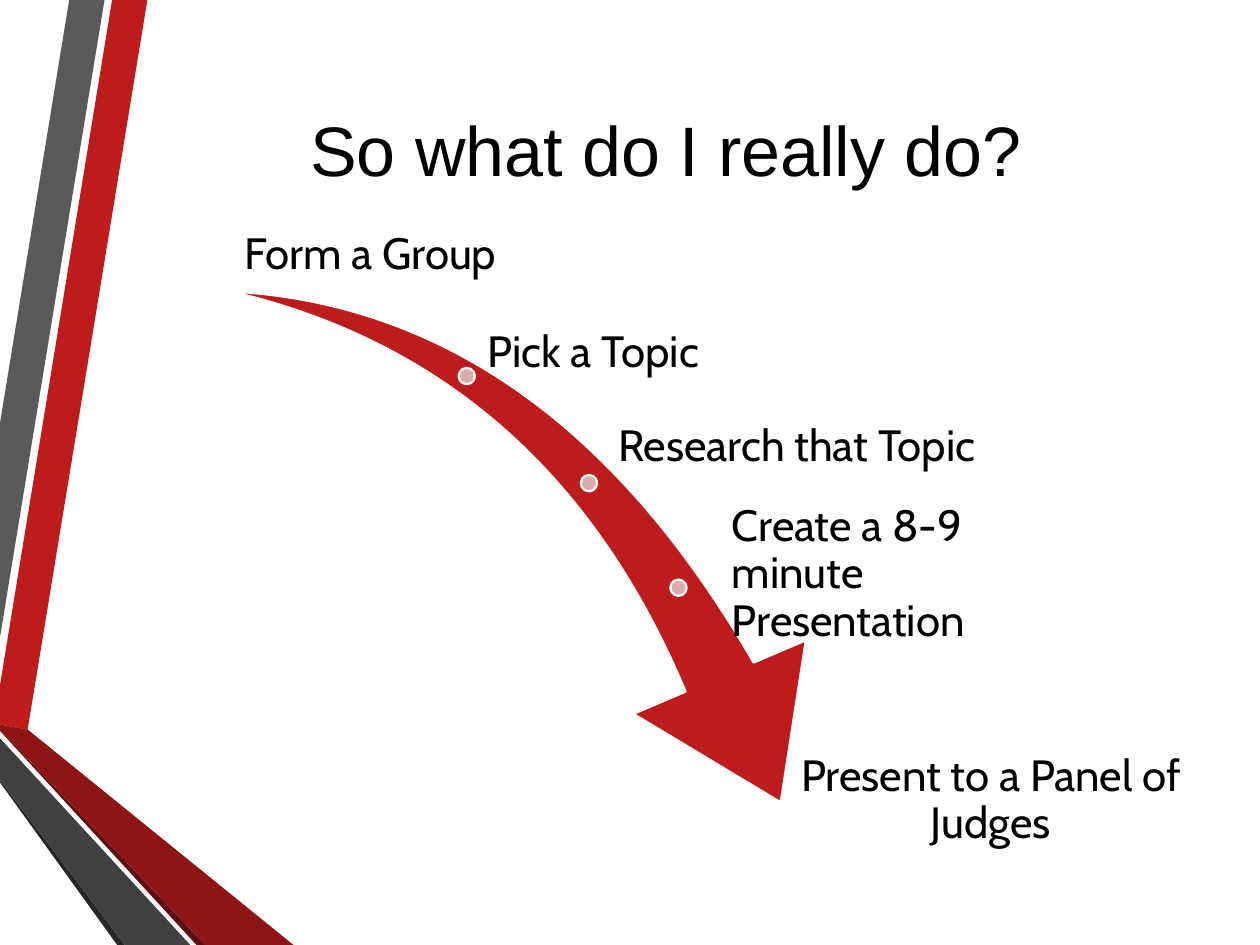
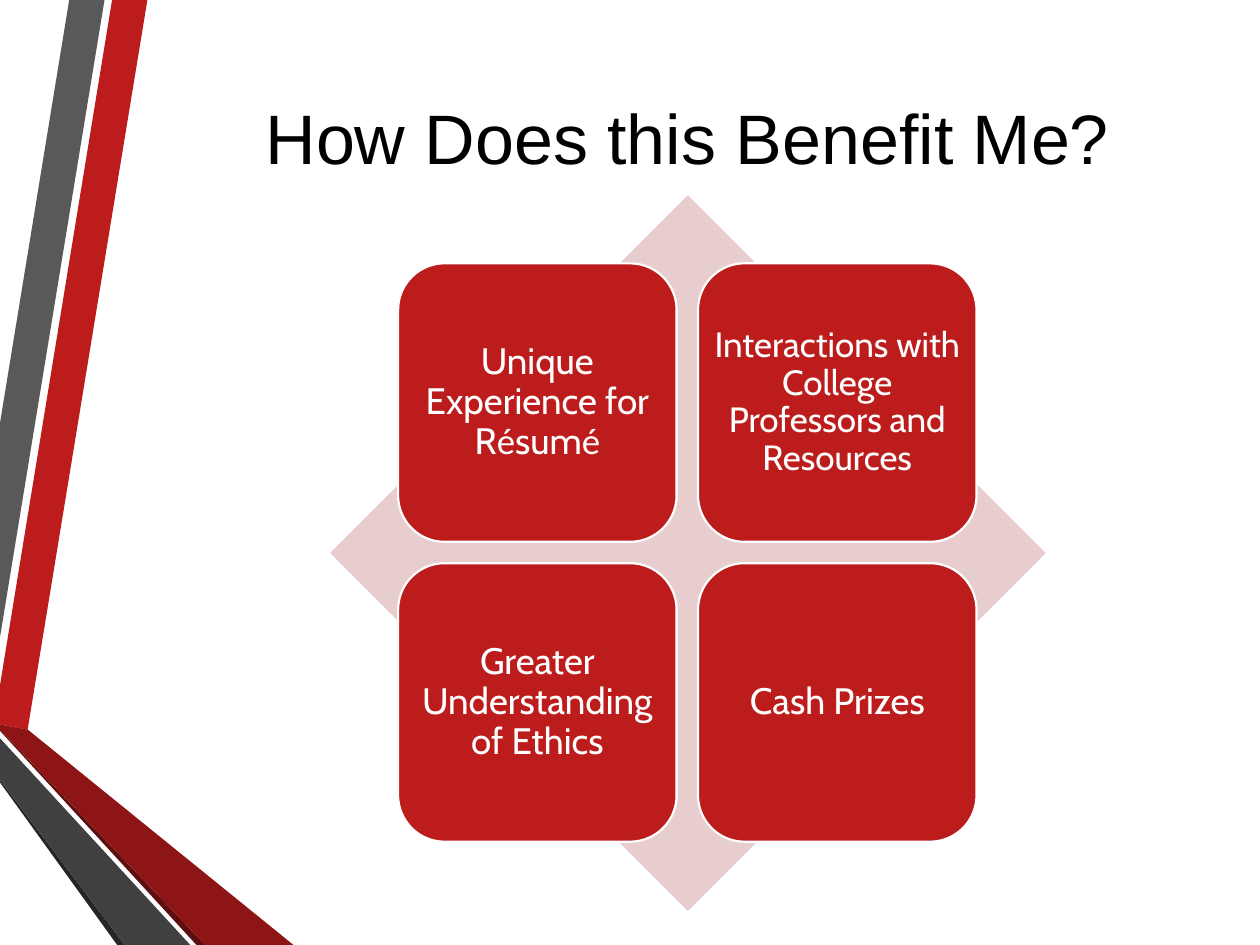
"""Build two slides: the steps of the contest and its benefits."""
from itertools import product

from pptx import Presentation
from pptx.dml.color import RGBColor
from pptx.enum import shapes, text
from pptx.util import Inches, Pt

COLOURS = {
    "red": "BC1C1C", "grey": "595959", "shade": "262626", "wine": "5E0E0E",
    "dark red": "8D1515", "dark grey": "404040", "dot": "DAACAC",
    "pink": "E7CDCD", "white": "FFFFFF", "black": "000000",
}
BANDS = [
    ("red", [(0, 5.44), (0, 5.75), (0.22, 5.79), (1.17, 0), (0.89, 0)]),
    ("grey", [(0.83, 0), (0.55, 0), (0, 3.36), (0, 5.06)]),
    ("shade", [(0, 6.19), (0, 6.21), (0.93, 7.5), (0.99, 7.5)]),
    ("wine", [(0, 5.79), (0, 5.8), (1.56, 7.5), (1.63, 7.5)]),
    ("dark red", [(0, 5.79), (1.63, 7.5), (2.33, 7.5), (0.22, 5.79), (0, 5.75)]),
    ("dark grey", [(0, 6.19), (0.99, 7.5), (1.51, 7.5), (0, 5.86)]),
]
LEFT, CENTER, RIGHT = text.PP_ALIGN.LEFT, text.PP_ALIGN.CENTER, text.PP_ALIGN.RIGHT
TOP, MIDDLE, BOTTOM = text.MSO_ANCHOR.TOP, text.MSO_ANCHOR.MIDDLE, text.MSO_ANCHOR.BOTTOM
PRESET = shapes.MSO_SHAPE
STEPS = [
    ("Form a Group", (1.73, 1.29, 2.42, 0.95), CENTER, BOTTOM),
    ("Pick a Topic", (3.84, 2.33, 3.53, 0.95), LEFT, MIDDLE),
    ("Research that Topic", (3.94, 3.05, 3.83, 1), RIGHT, MIDDLE),
    ("Create a 8-9 minute Presentation", (5.78, 4, 2.83, 1.12), LEFT, MIDDLE),
    ("Present to a Panel of Judges", (6.23, 5.95, 3.27, 0.95), CENTER, TOP),
]
DOTS = [(3.64, 2.92), (4.61, 3.77), (5.32, 4.6)]
DOT_SIZE = 0.13
BENEFITS = [
    ([("Unique Experience for R", "Cabin"), ("é", "Calibri"),
      ("sum", "Cabin"), ("é", "Calibri")], 21),
    ([("Interactions with College Professors and Resources", "Cabin")], 20),
    ([("Greater Understanding of Ethics", "Cabin")], 21),
    ([("Cash Prizes", "Cabin")], 21),
]
TILE_LEFT, TILE_TOP, TILE_SIZE, TILE_STEP = 3.16, 2.09, 2.21, 2.38


def colour(name):
    """Return the named colour."""
    return RGBColor.from_string(COLOURS[name])


def paint(shape, fill, outlined=False):
    """Fill a shape and give it a white outline or none."""
    shape.shadow.inherit = False
    shape.fill.solid()
    shape.fill.fore_color.rgb = colour(fill)
    if outlined:
        shape.line.color.rgb = colour("white")
        shape.line.width = Pt(1.25)
    else:
        shape.line.fill.background()
    return shape


def add_preset(page, kind, place, fill, outlined=True):
    """Add a painted preset shape."""
    shape = page.shapes.add_shape(kind, *map(Inches, place))
    return paint(shape, fill, outlined)


def add_band(page, fill, corners):
    """Add one closed polygon of the side decoration."""
    points = [(Inches(x), Inches(y)) for x, y in corners]
    builder = page.shapes.build_freeform(*points[0])
    builder.add_line_segments(points[1:], close=True)
    paint(builder.convert_to_shape(), fill)


def add_label(page, spans, place, size, ink="black", align=CENTER,
              anchor=MIDDLE, inset=0.03, spacing=0.9):
    """Add a wrapped text box built from (wording, font) spans."""
    box = page.shapes.add_textbox(*map(Inches, place))
    frame = box.text_frame
    frame.word_wrap = True
    frame.vertical_anchor = anchor
    frame.margin_left = frame.margin_right = Inches(inset)
    frame.margin_top = frame.margin_bottom = Inches(inset)
    para = frame.paragraphs[0]
    para.alignment = align
    para.line_spacing = spacing
    for wording, font in spans:
        span = para.add_run()
        span.text = wording
        span.font.name = font
        span.font.size = Pt(size)
        span.font.color.rgb = colour(ink)


def add_page(deck, title, place):
    """Add a slide with the side bands and a title."""
    page = deck.slides.add_slide(deck.slide_layouts[6])
    for fill, corners in BANDS:
        add_band(page, fill, corners)
    add_label(page, [(title, "Arial")], place, 40, inset=0.05, spacing=1.0)
    return page


def add_steps(page):
    """Add the curved arrow with its dots and step labels."""
    arrow = add_preset(page, PRESET.SWOOSH_ARROW, (1.71, 2.47, 5.14, 3.58), "red")
    arrow.rotation = 73.3
    arrow.adjustments[0], arrow.adjustments[1] = 0.163, 0.314
    for left, top in DOTS:
        add_preset(page, PRESET.OVAL, (left, top, DOT_SIZE, DOT_SIZE), "dot")
    for wording, place, align, anchor in STEPS:
        add_label(page, [(wording, "Cabin")], place, 25, align=align, anchor=anchor)


def add_benefits(page):
    """Add the diamond and its two-by-two grid of tiles."""
    add_preset(page, PRESET.DIAMOND, (2.62, 1.55, 5.68, 5.68), "pink", outlined=False)
    for (row, column), (spans, size) in zip(product(range(2), repeat=2), BENEFITS):
        place = (TILE_LEFT + column * TILE_STEP, TILE_TOP + row * TILE_STEP,
                 TILE_SIZE, TILE_SIZE)
        add_preset(page, PRESET.ROUNDED_RECTANGLE, place, "red")
        add_label(page, spans, place, size, ink="white", inset=size * 0.004)


def main():
    """Build and save the deck."""
    deck = Presentation()
    deck.slide_width, deck.slide_height = Inches(10), Inches(7.5)
    add_steps(add_page(deck, "So what do I really do?", (1.07, 0.35, 8.43, 1.65)))
    add_benefits(add_page(deck, "How Does this Benefit Me?", (1.24, 0, 8.43, 2.17)))
    deck.save("out.pptx")


if __name__ == "__main__":
    main()
